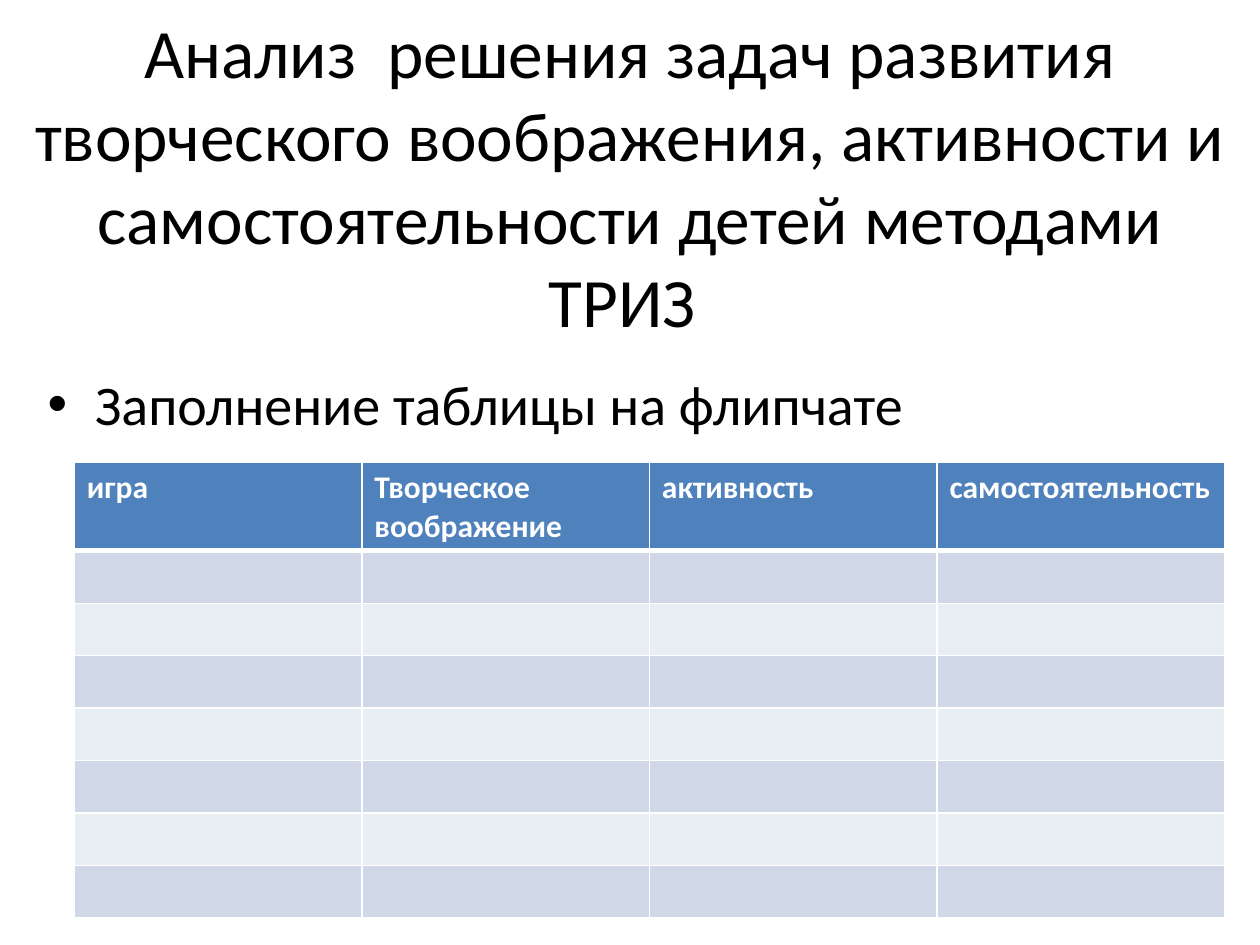
from lxml import etree
from pptx import Presentation
from pptx.dml.color import RGBColor
from pptx.enum import text
from pptx.oxml import ns
from pptx.util import Pt

COLORS = {"ink": "000000", "white": "FFFFFF", "header": "4F81BD",
          "odd": "D0D8E8", "even": "E9EDF4"}


def write(tf, content, size, color="ink", bold=False,
          align=text.PP_ALIGN.LEFT, anchor=text.MSO_ANCHOR.TOP):
    tf.word_wrap = True
    tf.vertical_anchor = anchor
    p = tf.paragraphs[0]
    p.alignment = align
    r = p.add_run()
    r.text = content
    r.font.name = "Calibri"
    r.font.size = Pt(size)
    r.font.bold = bold
    r.font.color.rgb = RGBColor.from_string(COLORS[color])
    return p


def add_borders(cell, widths):
    tc_pr = cell._tc.get_or_add_tcPr()
    for i, (side, width) in enumerate(widths.items()):
        ln = etree.Element(ns.qn(f"a:ln{side}"), w=str(Pt(width)))
        fill = etree.SubElement(ln, ns.qn("a:solidFill"))
        etree.SubElement(fill, ns.qn("a:srgbClr"), val=COLORS["white"])
        tc_pr.insert(i, ln)


prs = Presentation()
prs.slide_width, prs.slide_height = Pt(720), Pt(540)
s = prs.slides.add_slide(prs.slide_layouts[6])

# Title; its trailing space shifts the last centred line
sp = s.shapes.add_textbox(Pt(8.64), Pt(9.36), Pt(702.72), Pt(181.44))
write(sp.text_frame,
      "Анализ  решения задач развития творческого воображения, "
      "активности и самостоятельности детей методами ТРИЗ ",
      39.6, align=text.PP_ALIGN.CENTER, anchor=text.MSO_ANCHOR.MIDDLE)

# Bulleted line
sp = s.shapes.add_textbox(Pt(20.16), Pt(207.36), Pt(691.92), Pt(317.52))
p = write(sp.text_frame, "Заполнение таблицы на флипчате", 32)
p.space_before = Pt(6.4)
p_pr = p._p.get_or_add_pPr()
p_pr.set("marL", str(Pt(27)))
p_pr.set("indent", str(Pt(-27)))
etree.SubElement(p_pr, ns.qn("a:buFont"), typeface="Arial")
etree.SubElement(p_pr, ns.qn("a:buChar"), char="•")

# Table: a header over empty banded rows
headers = ["игра", "Творческое воображение", "активность", "самостоятельность"]
body_rows = 7
header_height, row_height, col_width = 50.4, 30, 164.3
table = s.shapes.add_table(
    body_rows + 1, len(headers), Pt(42.5), Pt(264.3),
    Pt(col_width * len(headers)),
    Pt(header_height + row_height * body_rows)).table
for col in table.columns:
    col.width = Pt(col_width)
for i, row in enumerate(table.rows):
    row.height = Pt(row_height if i else header_height)
    band = "header" if i == 0 else "odd" if i % 2 else "even"
    for j, cell in enumerate(row.cells):
        cell.fill.solid()
        cell.fill.fore_color.rgb = RGBColor.from_string(COLORS[band])
        add_borders(cell, {"L": 1, "R": 1, "T": 3 if i == 1 else 1,
                           "B": 3 if i == 0 else 1})
        if i == 0:
            write(cell.text_frame, headers[j], 18, color="white", bold=True)

prs.save("out.pptx")
